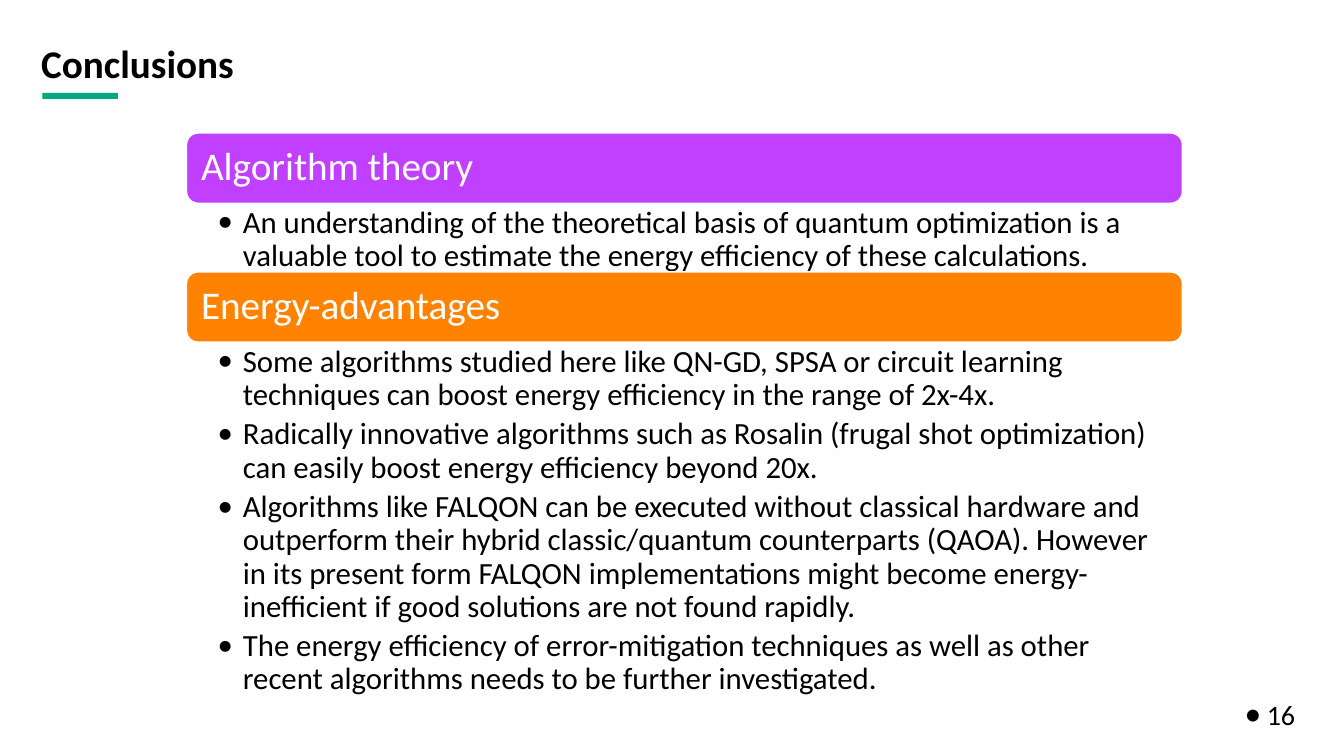
from pptx import Presentation
from pptx.dml.color import RGBColor
from pptx.enum.shapes import MSO_SHAPE as Shape
from pptx.enum.text import MSO_ANCHOR as Anchor, PP_ALIGN as Align
from pptx.oxml.xmlchemy import OxmlElement as Element
from pptx.util import Pt

COLORS = {"green": "01A982", "purple": "C140FF", "orange": "FF8300",
          "black": "000000", "white": "FFFFFF"}
FONT = "Calibri"
LEFT, WIDTH, BAR_HEIGHT = 133.2, 711.4, 50.2

SECTIONS = [
    ("Algorithm theory", "purple", 95, 49, [
        "An understanding of the theoretical basis of quantum optimization is a "
        "valuable tool to estimate the energy efficiency of these calculations.",
    ]),
    ("Energy-advantages", "orange", 194.2, 237.6, [
        "Some algorithms studied here like QN-GD, SPSA or circuit learning "
        "techniques can boost energy efficiency in the range of 2x-4x.",
        "Radically innovative algorithms such as Rosalin (frugal shot optimization) "
        "can easily boost energy efficiency beyond 20x.",
        "Algorithms like FALQON can be executed without classical hardware and "
        "outperform their hybrid classic/quantum counterparts (QAOA). However in its "
        "present form FALQON implementations might become energy-inefficient if good "
        "solutions are not found rapidly.",
        "The energy efficiency of error-mitigation techniques as well as other "
        "recent algorithms needs to be further investigated.",
    ]),
]


def color(name):
    """Return the named colour."""
    return RGBColor.from_string(COLORS[name])


def add_block(page, kind, area, fill, line=None):
    """Add a filled preset shape, outlined if a line colour is given."""
    block = page.shapes.add_shape(kind, *map(Pt, area))
    block.shadow.inherit = False
    block.fill.solid()
    block.fill.fore_color.rgb = color(fill)
    if line:
        block.line.color.rgb = color(line)
        block.line.width = Pt(1)
    else:
        block.line.fill.background()
    return block


def set_bullet(para, indent, percent):
    """Give a paragraph a hanging round bullet."""
    props = para._p.get_or_add_pPr()
    props.set("marL", str(Pt(indent)))
    props.set("indent", str(-Pt(indent)))
    for tag, name, value in (("a:buSzPct", "val", str(percent * 1000)),
                             ("a:buFont", "typeface", FONT),
                             ("a:buChar", "char", "•")):
        part = Element(tag)
        part.set(name, value)
        props.append(part)


def write(box, texts, size, ink="black", bold=False, insets=(7.2, 3.6, 7.2, 3.6),
          anchor=Anchor.MIDDLE, indent=0, percent=100, after=0):
    """Fill a box with left-aligned paragraphs."""
    frame = box.text_frame
    frame.word_wrap = True
    frame.vertical_anchor = anchor
    (frame.margin_left, frame.margin_top,
     frame.margin_right, frame.margin_bottom) = map(Pt, insets)
    for index, text in enumerate(texts):
        para = frame.add_paragraph() if index else frame.paragraphs[0]
        para.alignment = Align.LEFT
        para.line_spacing = 0.9
        para.space_after = Pt(after)
        if indent:
            set_bullet(para, indent, percent)
        span = para.add_run()
        span.text = text
        span.font.name = FONT
        span.font.size = Pt(size)
        span.font.bold = bold
        span.font.color.rgb = color(ink)


def add_text(page, area, texts, size, **style):
    """Add a text box with the given style."""
    write(page.shapes.add_textbox(*map(Pt, area)), texts, size, **style)


def add_section(page, heading, fill, top, height, points):
    """Add a coloured heading bar with its bullet points below."""
    bar = add_block(page, Shape.ROUNDED_RECTANGLE,
                    (LEFT, top, WIDTH, BAR_HEIGHT), fill, "white")
    write(bar, [heading], 28, ink="white", insets=(8,) * 4)
    add_text(page, (LEFT, top + BAR_HEIGHT - 0.4, WIDTH, height), points, 22,
             insets=(22.3, 2.9, 15.8, 2.9), anchor=Anchor.TOP, indent=18, after=4.4)


def main():
    """Build the conclusions slide."""
    deck = Presentation()
    deck.slide_width, deck.slide_height = Pt(960), Pt(540)
    page = deck.slides.add_slide(deck.slide_layouts[6])
    add_block(page, Shape.RECTANGLE, (30.2, 66.4, 54, 4.3), "green")
    add_text(page, (22.3, 31, 905, 31.7), ["Conclusions"], 28,
             bold=True, insets=(7.2,) * 4)
    add_text(page, (882, 497, 54, 28.8), ["16"], 20, indent=15.8, percent=120)
    for section in SECTIONS:
        add_section(page, *section)
    deck.save("out.pptx")


if __name__ == "__main__":
    main()
